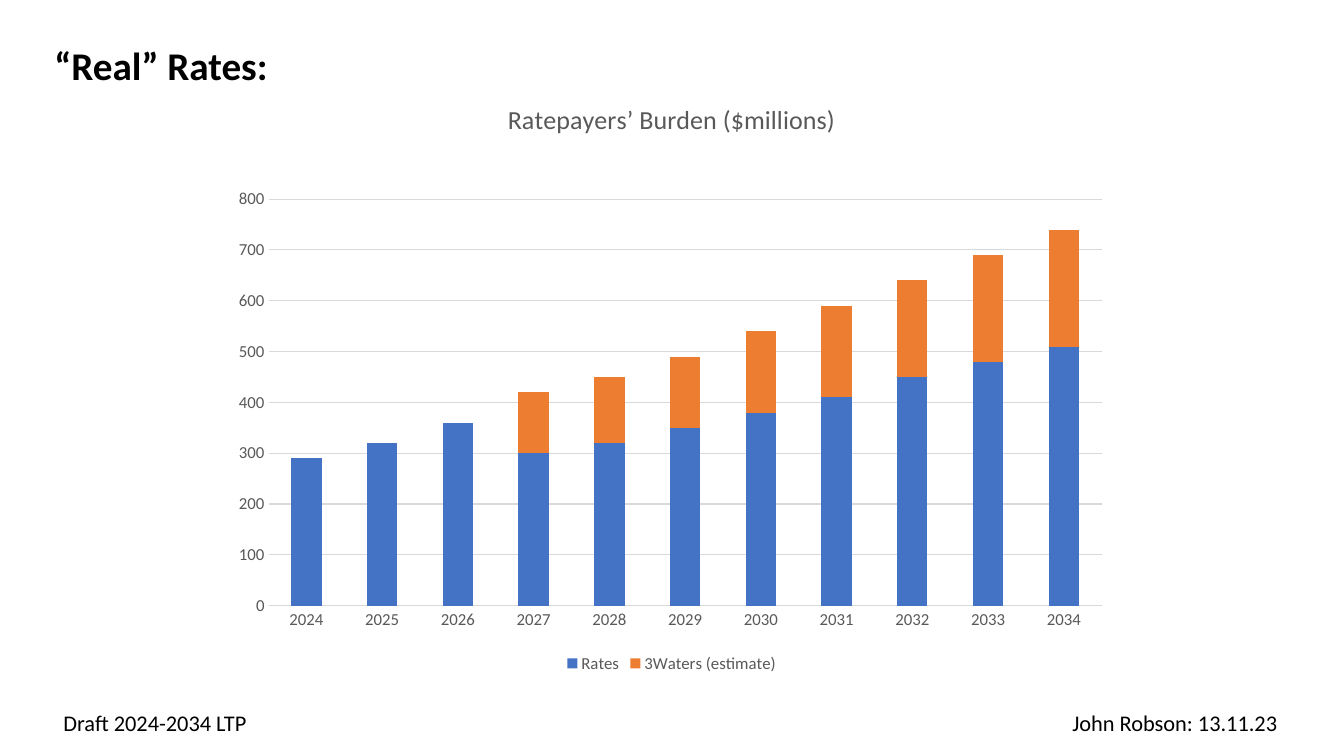
from lxml import etree
from pptx import Presentation
from pptx import util as u
from pptx.chart import data as chart_data
from pptx.dml.color import RGBColor
from pptx.enum import chart as chart_enum, text
from pptx.oxml import ns

BLACK = RGBColor(0x00, 0x00, 0x00)
GREY = RGBColor(0x59, 0x59, 0x59)
LIGHT_GREY = RGBColor(0xD9, 0xD9, 0xD9)
BLUE = RGBColor(0x44, 0x72, 0xC4)
ORANGE = RGBColor(0xED, 0x7D, 0x31)
FONT = "Calibri"

YEARS = [str(year) for year in range(2024, 2035)]
BURDEN = [
    ("Rates", BLUE, (290, 320, 360, 300, 320, 350, 380, 410, 450, 480, 510)),
    ("3Waters (estimate)", ORANGE, (0, 0, 0, 120, 130, 140, 160, 180, 190, 210, 230)),
]


def format_font(font, size, color, bold=False):
    font.name = FONT
    font.size = u.Pt(size)
    font.bold = bold
    font.color.rgb = color


def write_text(frame, content, size=16, color=BLACK, bold=False, align=text.PP_ALIGN.LEFT):
    paragraph = frame.paragraphs[0]
    paragraph.alignment = align
    run = paragraph.add_run()
    run.text = content
    format_font(run.font, size, color, bold)


def fit_frame(shape):
    frame = shape.text_frame
    frame.word_wrap = False
    frame.auto_size = text.MSO_AUTO_SIZE.SHAPE_TO_FIT_TEXT
    frame.vertical_anchor = text.MSO_ANCHOR.TOP
    return frame


def add_title(slide, content):
    title = slide.shapes.title
    title.left, title.top = u.Pt(31.7), u.Pt(26)
    title.width, title.height = u.Pt(168.5), u.Pt(41)
    write_text(fit_frame(title), content, size=28, bold=True)


def add_footer_note(slide, content, left, width):
    box = slide.shapes.add_textbox(u.Pt(left), u.Pt(503.3), u.Pt(width), u.Pt(26.6))
    write_text(fit_frame(box), content)


def place_plot(chart, **fractions):
    plot_area = chart.plots[0]._element.getparent()
    for old_layout in plot_area.findall(ns.qn("c:layout")):
        plot_area.remove(old_layout)
    layout = etree.Element(ns.qn("c:layout"))
    plot_area.insert(0, layout)
    manual = etree.SubElement(layout, ns.qn("c:manualLayout"))
    settings = {"layoutTarget": "inner", "xMode": "edge", "yMode": "edge", **fractions}
    for name, value in settings.items():
        etree.SubElement(manual, ns.qn(f"c:{name}")).set("val", str(value))


def format_axes(chart):
    for axis in (chart.category_axis, chart.value_axis):
        axis.major_tick_mark = axis.minor_tick_mark = chart_enum.XL_TICK_MARK.NONE
        format_font(axis.tick_labels.font, 12, GREY)
    values = chart.value_axis
    values.minimum_scale, values.maximum_scale, values.major_unit = 0, 800, 100
    values.format.line.fill.background()
    values.has_major_gridlines = True
    for line in (chart.category_axis.format.line, values.major_gridlines.format.line):
        line.color.rgb = LIGHT_GREY
        line.width = u.Pt(0.75)


def add_burden_chart(slide):
    data = chart_data.CategoryChartData()
    data.categories = YEARS
    for name, _, amounts in BURDEN:
        data.add_series(name, amounts)
    chart = slide.shapes.add_chart(
        chart_enum.XL_CHART_TYPE.COLUMN_STACKED,
        u.Pt(159.8), u.Pt(56.9), u.Pt(640), u.Pt(427), data,
    ).chart
    format_font(chart.font, 10, BLACK)
    chart.has_title = True
    write_text(chart.chart_title.text_frame, "Ratepayers’ Burden ($millions)",
               size=18.6, color=GREY, align=text.PP_ALIGN.CENTER)
    chart.chart_title.include_in_layout = False
    chart.has_legend = True
    chart.legend.position = chart_enum.XL_LEGEND_POSITION.BOTTOM
    chart.legend.include_in_layout = False
    format_font(chart.legend.font, 12, GREY)
    plot = chart.plots[0]
    plot.gap_width, plot.overlap = 150, 100
    plot.vary_by_categories = False
    for series, (_, color, _) in zip(plot.series, BURDEN):
        series.format.fill.solid()
        series.format.fill.fore_color.rgb = color
    format_axes(chart)
    place_plot(chart, x=0.05, y=0.2, w=0.93, h=0.68)


def main():
    presentation = Presentation()
    presentation.slide_width, presentation.slide_height = u.Pt(960), u.Pt(540)
    slide = presentation.slides.add_slide(presentation.slide_layouts[5])
    add_title(slide, "“Real” Rates:")
    add_footer_note(slide, "John Robson: 13.11.23", left=758.9, width=162.7)
    add_footer_note(slide, "Draft 2024-2034 LTP", left=38.2, width=147.6)
    add_burden_chart(slide)
    presentation.save("out.pptx")


if __name__ == "__main__":
    main()
